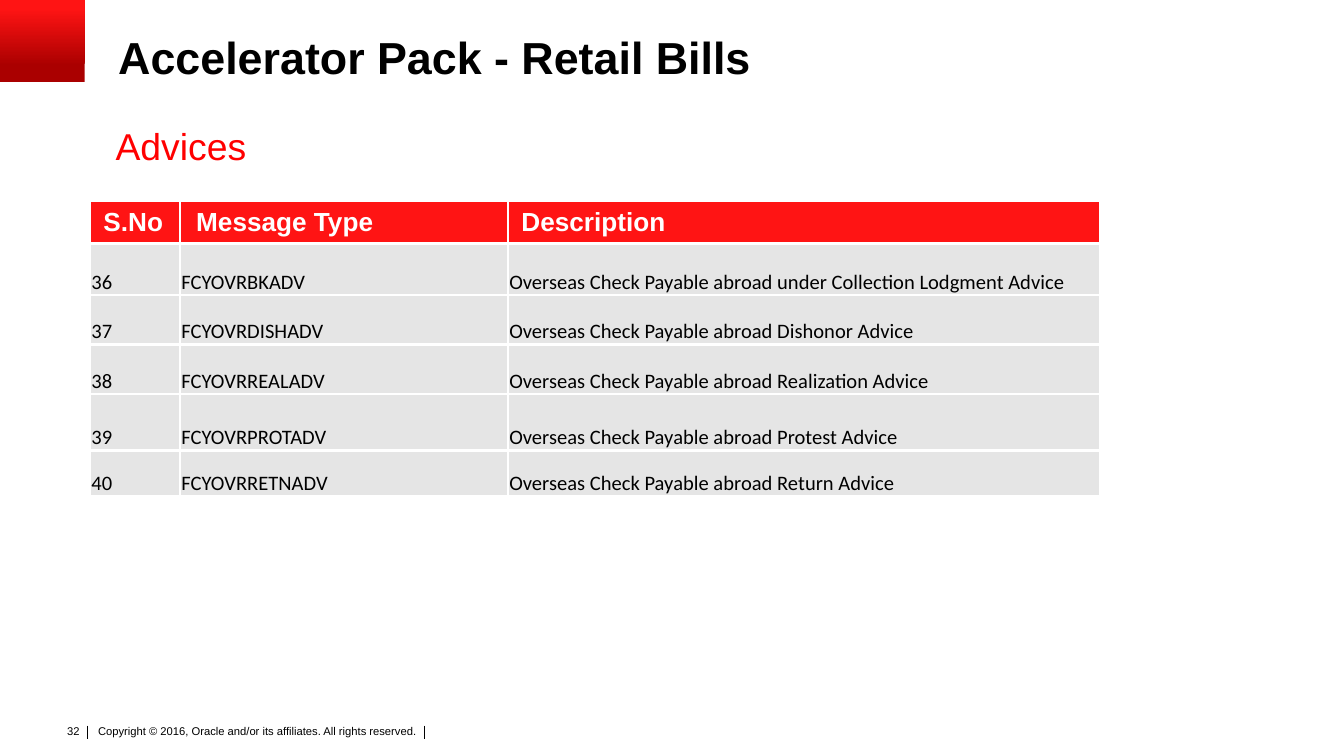
from lxml import etree
from pptx import Presentation
from pptx.dml.color import RGBColor
from pptx.enum.shapes import MSO_CONNECTOR, MSO_SHAPE
from pptx.enum.text import MSO_ANCHOR, PP_ALIGN
from pptx.oxml.ns import qn
from pptx.util import Inches, Pt

BLACK = RGBColor(0x00, 0x00, 0x00)
WHITE = RGBColor(0xFF, 0xFF, 0xFF)
RED = RGBColor(0xFF, 0x00, 0x00)
BRIGHT_RED = RGBColor(0xFF, 0x14, 0x14)
DARK_RED = RGBColor(0xAA, 0x00, 0x00)
GREY = RGBColor(0xE5, 0xE5, 0xE5)

COLUMNS = [0.67, 2.44, 4.4]
ROWS = [0.31, 0.38, 0.37, 0.37, 0.42, 0.34]
HEADERS = ["S.No", "Message Type", "Description"]
FIRST_NUMBER = 36
ADVICES = [
    ("FCYOVRBKADV", "under Collection Lodgment"),
    ("FCYOVRDISHADV", "Dishonor"),
    ("FCYOVRREALADV", "Realization"),
    ("FCYOVRPROTADV", "Protest"),
    ("FCYOVRRETNADV", "Return"),
]


def style(p, size, color=BLACK, bold=False, font="Arial"):
    for r in p.runs:
        f = r.font
        f.name, f.size, f.bold = font, Pt(size), bold
        f.color.rgb = color


def set_margins(target, left, top, right, bottom):
    target.margin_left, target.margin_top = Inches(left), Inches(top)
    target.margin_right, target.margin_bottom = Inches(right), Inches(bottom)


def add_text(s, x, y, w, h, text, size, margins=(0, 0, 0, 0), **look):
    tf = s.shapes.add_textbox(Inches(x), Inches(y), Inches(w), Inches(h)).text_frame
    tf.word_wrap = True
    set_margins(tf, *margins)
    p = tf.paragraphs[0]
    p.text = text
    style(p, size, **look)
    return p


def add_corner(s, x, y, w, h):
    sp = s.shapes.add_shape(MSO_SHAPE.RECTANGLE, Inches(x), Inches(y), Inches(w), Inches(h))
    sp.shadow.inherit = False
    sp.line.fill.background()
    sp.fill.gradient()
    sp.fill.gradient_angle = 90  # dark at the bottom, bright at the top
    stops = sp.fill.gradient_stops
    for stop, position, color in zip(stops, (0.2, 0.9), (DARK_RED, BRIGHT_RED)):
        stop.position = position
        stop.color.rgb = color


def add_heading(s, x, y):
    title = add_text(s, x + 0.02, y, 8.5, 0.53, "Accelerator Pack - Retail Bills", 24, bold=True)
    title.line_spacing = 0.9
    add_text(s, x, y + 0.65, 9, 0.33, "Advices", 20, color=RED)


def add_borders(cell, sides):
    tc_pr = cell._tc.get_or_add_tcPr()
    for side in sides:
        ln = etree.SubElement(tc_pr, qn(f"a:ln{side}"), w=str(Pt(1.5)))
        fill = etree.SubElement(ln, qn("a:solidFill"))
        etree.SubElement(fill, qn("a:srgbClr"), val=str(WHITE))


def inner_sides(i, j):
    """Sides of a cell that face another cell, in schema order."""
    faces = {"L": j > 0, "R": j < len(COLUMNS) - 1, "T": i > 0, "B": i < len(ROWS) - 1}
    return [side for side, inner in faces.items() if inner]


def fill_cell(cell, text, is_header):
    cell.text = text
    p = cell.text_frame.paragraphs[0]
    cell.fill.solid()
    if is_header:
        cell.fill.fore_color.rgb = BRIGHT_RED
        cell.vertical_anchor = MSO_ANCHOR.MIDDLE
        set_margins(cell, 0.1, 0.04, 0.1, 0.04)
        style(p, 14, WHITE, bold=True)
    else:
        cell.fill.fore_color.rgb = GREY
        cell.vertical_anchor = MSO_ANCHOR.BOTTOM
        set_margins(cell, 0.01, 0.01, 0.01, 0)
        style(p, 11, font="Calibri")


def add_advice_table(s, x, y):
    table = s.shapes.add_table(
        len(ROWS), len(COLUMNS), Inches(x), Inches(y),
        Inches(sum(COLUMNS)), Inches(sum(ROWS))).table
    for column, width in zip(table.columns, COLUMNS):
        column.width = Inches(width)
    for row, height in zip(table.rows, ROWS):
        row.height = Inches(height)

    content = [HEADERS] + [
        [str(number), code, f"Overseas Check Payable abroad {event} Advice"]
        for number, (code, event) in enumerate(ADVICES, FIRST_NUMBER)]
    for i, texts in enumerate(content):
        for j, text in enumerate(texts):
            cell = table.cell(i, j)
            add_borders(cell, inner_sides(i, j))
            fill_cell(cell, text, is_header=i == 0)
    # The middle header sits slightly further in
    table.cell(0, 1).margin_left = Inches(0.12)


def add_footer(s, x, y):
    number = add_text(s, x, y, 0.3, 0.2, "32", 6, margins=(0.1, 0.05, 0.1, 0.05))
    number.alignment = PP_ALIGN.RIGHT
    add_text(s, x + 0.3, y + 0.03, 2.74, 0.24,
             "Copyright © 2016, Oracle and/or its affiliates. All rights reserved.",
             6, margins=(0.04, 0.02, 0.04, 0.02))
    # Separators on both sides of the copyright line
    for dx in (0.26, 2.77):
        line = s.shapes.add_connector(
            MSO_CONNECTOR.STRAIGHT, Inches(x + dx), Inches(y + 0.06),
            Inches(x + dx), Inches(y + 0.16))
        line.line.color.rgb = BLACK
        line.line.width = Pt(0.5)
        etree.SubElement(line._element.spPr, qn("a:effectLst"))


def main():
    prs = Presentation()
    prs.slide_width = Inches(10)
    prs.slide_height = prs.slide_width * 9 // 16
    s = prs.slides.add_slide(prs.slide_layouts[6])
    add_footer(s, 0.39, 5.34)
    add_corner(s, 0, 0, 0.63, 0.61)
    add_heading(s, 0.86, 0.27)
    add_advice_table(s, 0.67, 1.5)
    prs.save("out.pptx")


if __name__ == "__main__":
    main()
